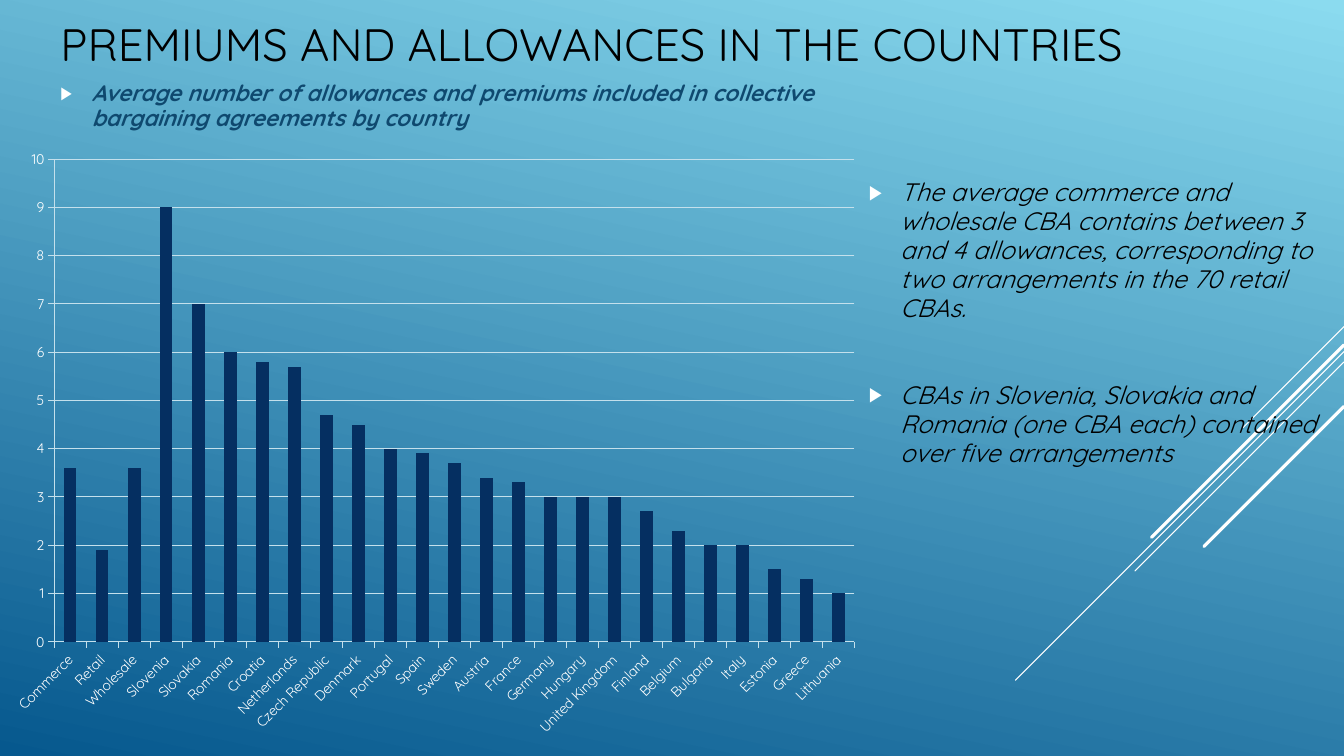
from typing import NamedTuple

from lxml.etree import SubElement
from pptx import Presentation
from pptx.chart.data import CategoryChartData as ChartData
from pptx.dml.color import RGBColor
from pptx.enum.chart import XL_CHART_TYPE as ChartType, XL_TICK_MARK as Tick
from pptx.enum.shapes import MSO_CONNECTOR as Link
from pptx.enum.text import MSO_ANCHOR as Anchor, MSO_AUTO_SIZE as Fit, PP_ALIGN as Align
from pptx.oxml.ns import qn
from pptx.util import Cm, Pt

FONT = "Quicksand"
WHITE = RGBColor(0xFF, 0xFF, 0xFF)
BLACK = RGBColor(0, 0, 0)
BLUE = RGBColor(0x0F, 0x49, 0x6F)
NAVY = RGBColor(0x05, 0x2F, 0x61)
PALE = RGBColor(0xC4, 0xE0, 0xEC)
LIGHT = RGBColor(0x8B, 0xDB, 0xEF)
DEEP = RGBColor(0x06, 0x58, 0x8E)

WIDTH, HEIGHT = 33.87, 19.05
HANG = Cm(0.79)


class Box(NamedTuple):
    left: float
    top: float
    width: float
    height: float


class Ray(NamedTuple):
    """A diagonal from the right edge, running equally far left and down."""
    top: float
    run: float
    weight: float


class Block(NamedTuple):
    slot: int
    box: Box
    inset: float
    size: float
    color: RGBColor
    bold: bool
    gap: float
    items: list[str]


RAYS = [
    Ray(8.23, 2.54, 0.75),
    Ray(8.86, 8.28, 0.75),
    Ray(9.12, 5.27, 0.75),
    Ray(8.69, 4.85, 2.25),
    Ray(10.24, 3.53, 2.25),
]

TITLE = Block(0, Box(1.27, 0.28, 29.08, 1.4), 0.13, 32.4, BLACK, False, 0,
              ["PREMIUMS AND ALLOWANCES IN THE COUNTRIES"])
LISTS = [
    Block(1, Box(1.27, 1.9, 20.02, 16.97), 0.13, 16, BLUE, True, 6, [
        "Average number of allowances and premiums included in collective "
        "bargaining agreements by country",
    ]),
    Block(2, Box(21.64, 1.96, 12.22, 17.15), 2.53, 18, BLACK, False, 41, [
        "The average commerce and wholesale CBA contains between 3 and 4 "
        "allowances, corresponding to two arrangements in the 70 retail CBAs.",
        "CBAs in Slovenia, Slovakia and Romania (one CBA each) contained "
        "over five arrangements",
    ]),
]

PLOT = Box(0.063, 0.025, 0.932, 0.798)
COUNTS = {
    "Commerce": 3.6, "Retail": 1.9, "Wholesale": 3.6, "Slovenia": 9,
    "Slovakia": 7, "Romania": 6, "Croatia": 5.8, "Netherlands": 5.7,
    "Czech Republic": 4.7, "Denmark": 4.5, "Portugal": 4, "Spain": 3.9,
    "Sweden": 3.7, "Austria": 3.4, "France": 3.3, "Germany": 3,
    "Hungary": 3, "United Kingdom": 3, "Finland": 2.7, "Belgium": 2.3,
    "Bulgaria": 2, "Italy": 2, "Estonia": 1.5, "Greece": 1.3, "Lithuania": 1,
}


def add_ray(slide, ray: Ray, depth: int) -> None:
    line = slide.shapes.add_connector(
        Link.STRAIGHT, Cm(WIDTH), Cm(ray.top),
        Cm(WIDTH - ray.run), Cm(ray.top + ray.run))
    line.line.color.rgb = WHITE
    line.line.width = Pt(ray.weight)
    props = line._element.spPr
    props.find(qn("a:ln")).set("cap", "rnd")
    SubElement(props, qn("a:effectLst"))
    slide.shapes._spTree.insert(2 + depth, line._element)


def add_mark(para) -> None:
    """Give the paragraph a white triangle bullet and a hanging indent."""
    props = para._p.get_or_add_pPr()
    props.set("marL", str(HANG))
    props.set("indent", str(-HANG))
    tint = SubElement(props, qn("a:buClr"))
    SubElement(tint, qn("a:srgbClr"), val=str(WHITE))
    SubElement(props, qn("a:buSzPct"), val="80000")
    SubElement(props, qn("a:buChar"), char="▶")


def fill_block(slide, block: Block, listed: bool) -> None:
    shape = slide.placeholders[block.slot]
    shape.left, shape.top, shape.width, shape.height = map(Cm, block.box)
    frame = shape.text_frame
    frame.word_wrap = True
    frame.auto_size = Fit.NONE
    frame.vertical_anchor = Anchor.TOP
    frame.margin_top = Cm(block.inset)
    frame.text = "\n".join(block.items)
    for para in frame.paragraphs:
        if listed:
            add_mark(para)
            para.line_spacing = 0.96
        para.alignment = Align.LEFT
        para.space_before = Pt(0)
        para.space_after = Pt(block.gap)
        font = para.font
        font.name, font.size = FONT, Pt(block.size)
        font.bold, font.italic = block.bold, listed
        font.color.rgb = block.color


def place_plot(chart, plot: Box) -> None:
    """Pin the inner plot area to fractions of the chart."""
    area = chart._chartSpace.chart.plotArea
    layout = area.find(qn("c:layout"))
    if layout is None:
        layout = SubElement(area, qn("c:layout"))
        area.insert(0, layout)
    manual = SubElement(layout, qn("c:manualLayout"))
    parts = {"layoutTarget": "inner", "xMode": "edge", "yMode": "edge",
             "x": plot.left, "y": plot.top, "w": plot.width, "h": plot.height}
    for name, value in parts.items():
        SubElement(manual, qn(f"c:{name}"), val=str(value))


def add_bars(slide, box: Box) -> None:
    data = ChartData()
    data.categories = list(COUNTS)
    data.add_series("Series 1", list(COUNTS.values()))
    chart = slide.shapes.add_chart(
        ChartType.COLUMN_CLUSTERED, *map(Cm, box), data).chart
    chart.has_legend = False
    chart.has_title = False
    chart.font.name, chart.font.size = FONT, Pt(10)
    chart.font.color.rgb = WHITE
    place_plot(chart, PLOT)

    bars = chart.plots[0]
    bars.gap_width = 150
    bars.vary_by_categories = False
    fill = bars.series[0].format.fill
    fill.solid()
    fill.fore_color.rgb = NAVY

    cats, vals = chart.category_axis, chart.value_axis
    vals.minimum_scale, vals.maximum_scale, vals.major_unit = 0, 10, 1
    vals.has_major_gridlines = True
    for line in (cats.format.line, vals.format.line, vals.major_gridlines.format.line):
        line.color.rgb = PALE
        line.width = Pt(0.75)
    for axis in (cats, vals):
        axis.major_tick_mark = Tick.OUTSIDE
        axis.minor_tick_mark = Tick.NONE
        font = axis.tick_labels.font
        font.name, font.size = FONT, Pt(10)
        font.color.rgb = WHITE
    cats._element.find(qn("c:txPr")).find(qn("a:bodyPr")).set("rot", "-2700000")


def main() -> None:
    deck = Presentation()
    deck.slide_width, deck.slide_height = Cm(WIDTH), Cm(HEIGHT)
    slide = deck.slides.add_slide(deck.slide_layouts[3])
    back = slide.background.fill
    back.gradient()
    back.gradient_angle = 360 - 102
    for stop, color in zip(back.gradient_stops, (LIGHT, DEEP)):
        stop.color.rgb = color
    for depth, ray in enumerate(RAYS):
        add_ray(slide, ray, depth)
    fill_block(slide, TITLE, listed=False)
    for block in LISTS:
        fill_block(slide, block, listed=True)
    add_bars(slide, Box(0, 3.63, 21.64, 15.24))
    deck.save("out.pptx")


if __name__ == "__main__":
    main()
